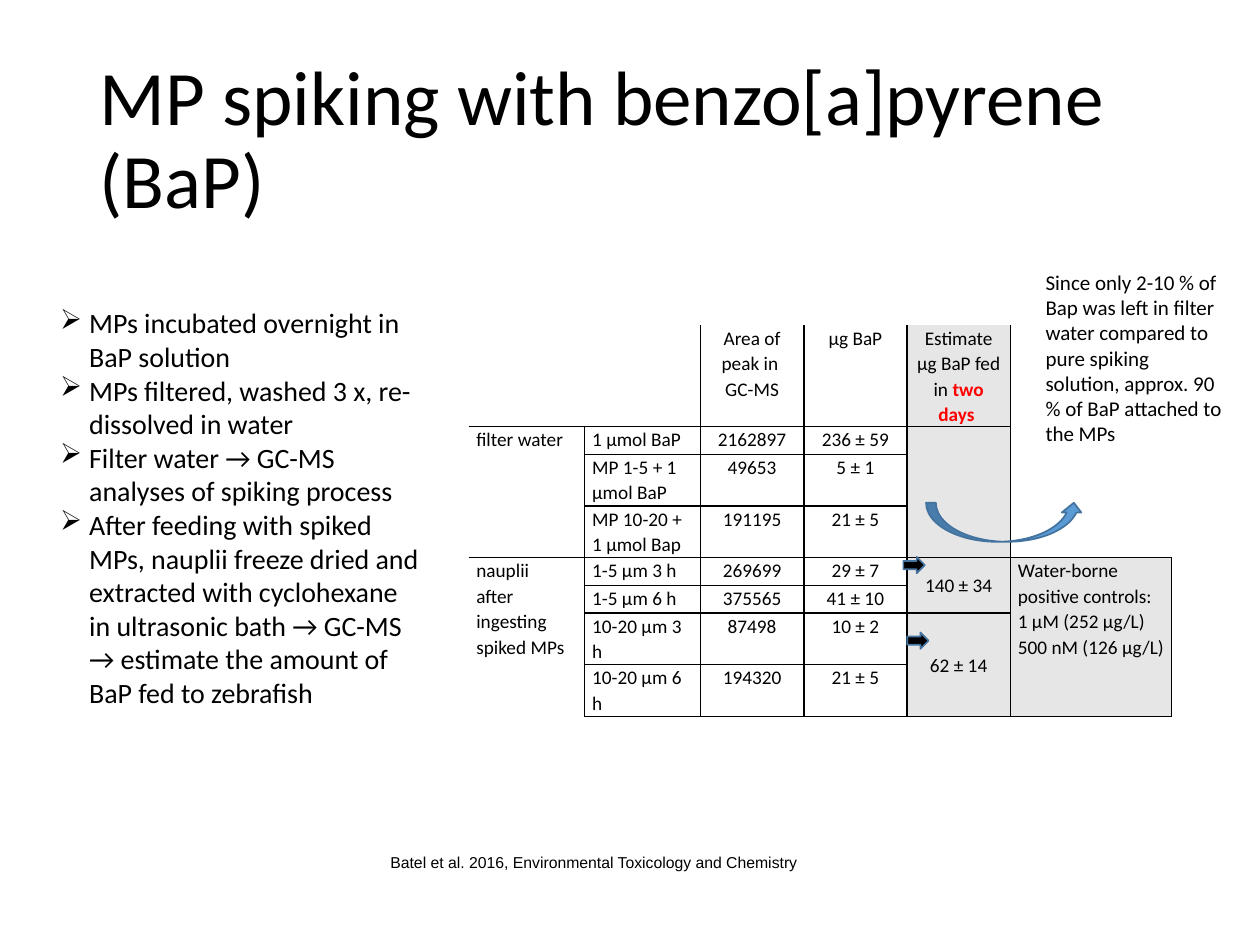
from lxml.etree import SubElement
from pptx import Presentation
from pptx.dml.color import RGBColor
from pptx.enum.shapes import MSO_SHAPE as Preset
from pptx.enum.text import MSO_ANCHOR as Anchor, MSO_AUTO_SIZE as AutoSize, PP_ALIGN as Align
from pptx.oxml.ns import qn
from pptx.util import Inches, Pt

UNIT = Inches(0.1)
COLUMNS, ROWS = 100, 75
BLACK = RGBColor(0x00, 0x00, 0x00)
RED = RGBColor(0xFF, 0x00, 0x00)
GREY = RGBColor(0xE7, 0xE6, 0xE6)
BLUE = RGBColor(0x5B, 0x9B, 0xD5)
DARK_BLUE = RGBColor(0x43, 0x73, 0x9E)

BULLETS = [
    "MPs incubated overnight in BaP solution",
    "MPs filtered, washed 3 x, re-dissolved in water",
    "Filter water → GC-MS analyses of spiking process",
    "After feeding with spiked MPs, nauplii freeze dried and extracted with cyclohexane "
    "in ultrasonic bath → GC-MS → estimate the amount of BaP fed to zebrafish",
]
NOTE = ("Since only 2-10 % of Bap was left in filter water compared to pure spiking solution, "
        "approx. 90 % of BaP attached to the MPs")
NAUPLII = ["nauplii", "after ingesting spiked MPs"]
CONTROLS = ["Water-borne positive controls:", "1 µM (252 µg/L)", "500 nM (126 µg/L)"]
ESTIMATE = [("Estimate µg BaP fed in ", "two days ")]
CELLS = [
    [[], [], ["Area of peak in ", "GC-MS"], ["µg BaP"], ESTIMATE, []],
    [["filter water"], ["1 µmol BaP"], ["2162897"], ["236 ± 59"], [], []],
    [[], ["MP 1-5 + 1 µmol BaP"], ["49653"], ["5 ± 1"], [], []],
    [[], ["MP 10-20 + 1 µmol Bap"], ["191195"], ["21 ± 5"], [], []],
    [NAUPLII, ["1-5 µm 3 h"], ["269699"], ["29 ± 7"], ["140 ± 34"], CONTROLS],
    [[], ["1-5 µm 6 h"], ["375565"], ["41 ± 10"], [], []],
    [[], ["10-20 µm 3 h"], ["87498"], ["10 ± 2"], ["62 ± 14"], []],
    [[], ["10-20 µm 6 h"], ["194320"], ["21 ± 5"], [], []],
]
SIDES = [row.split() for row in (
    "B RB LRB LRB LRB L",
    "TR LRTB LRTB LRTB LRT L",
    "R LRTB LRTB LRTB LR L",
    "RB LRTB LRTB LRTB LRB LB",
    "TR LRTB LRTB LRTB LRTB LRTB",
    "R LRTB LRTB LRTB LRB LR",
    "R LRTB LRTB LRTB LRTB LR",
    "R LRTB LRTB LRTB LRB LRB",
)]
COLUMN_WIDTHS = [9.2, 9.2, 8.2, 8.2, 8.2, 12.8]
ROW_HEIGHTS = [6.2, 2.2, 4.1, 4.1, 2.2, 2.2, 4.1, 4.1]
MERGES = [(4, 0, 7, 0), (4, 4, 5, 4), (6, 4, 7, 4), (4, 5, 7, 5)]


def grid(*lengths):
    """Turn grid units into slide lengths."""
    return [round(length * UNIT) for length in lengths]


def write_text(frame, paragraphs, size=11, font="Calibri", align=Align.LEFT, spacing=None, bullet=None):
    """Fill a text frame; the second piece of a paragraph is emphasised."""
    frame.word_wrap = True
    for index, pieces in enumerate(paragraphs):
        paragraph = frame.add_paragraph() if index else frame.paragraphs[0]
        paragraph.alignment = align
        if spacing:
            paragraph.line_spacing = spacing
        if bullet:
            properties = paragraph._p.get_or_add_pPr()
            properties.set("marL", str(Inches(0.23)))
            properties.set("indent", str(-Inches(0.23)))
            SubElement(properties, qn("a:buChar"), char=bullet)
        for position, piece in enumerate([pieces] if isinstance(pieces, str) else pieces):
            run = paragraph.add_run()
            run.text = piece
            run.font.name, run.font.size = font, Pt(size)
            run.font.bold = position > 0
            run.font.color.rgb = RED if position else BLACK


def add_text(slide, box, paragraphs, anchor=Anchor.TOP, grow=True, **text_format):
    """Place a text box on the grid."""
    frame = slide.shapes.add_textbox(*grid(*box)).text_frame
    write_text(frame, paragraphs, **text_format)
    frame.vertical_anchor = anchor
    frame.auto_size = AutoSize.SHAPE_TO_FIT_TEXT if grow else AutoSize.NONE


def set_borders(cell, sides):
    """Draw thin black lines on the named sides of a cell and clear the rest."""
    properties = cell._tc.get_or_add_tcPr()
    for position, side in enumerate("LRTB"):
        line = properties.makeelement(qn(f"a:ln{side}"), {"w": str(Pt(1))})
        properties.insert(position, line)
        if side in sides:
            fill = SubElement(line, qn("a:solidFill"))
            SubElement(fill, qn("a:srgbClr"), val=str(BLACK))
        else:
            SubElement(line, qn("a:noFill"))


def format_cell(cell, row, column):
    """Write and style one cell of the results table."""
    paragraphs = CELLS[row][column]
    cell.margin_left = cell.margin_right = Inches(0.06)
    cell.margin_top = cell.margin_bottom = 0
    cell.vertical_anchor = Anchor.MIDDLE if column == 4 and row > 3 else Anchor.TOP
    if column == 4 or (column == 5 and row > 3):
        cell.fill.solid()
        cell.fill.fore_color.rgb = GREY
    else:
        cell.fill.background()
    set_borders(cell, SIDES[row][column])
    if paragraphs:
        align = Align.CENTER if 2 <= column <= 4 else Align.LEFT
        write_text(cell.text_frame, paragraphs, align=align, spacing=1.07)
    else:
        SubElement(cell.text_frame.paragraphs[0]._p, qn("a:endParaRPr"), sz="1100")


def add_results(slide, box):
    """Place the results table in its box."""
    table = slide.shapes.add_table(len(CELLS), len(COLUMN_WIDTHS), *grid(*box)).table
    table.first_row = table.horz_banding = False
    for column, width in zip(table.columns, grid(*COLUMN_WIDTHS)):
        column.width = width
    for row, height in zip(table.rows, grid(*ROW_HEIGHTS)):
        row.height = height
    for row in range(len(CELLS)):
        for column in range(len(COLUMN_WIDTHS)):
            format_cell(table.cell(row, column), row, column)
    for top, left, bottom, right in MERGES:
        table.cell(top, left).merge(table.cell(bottom, right))


def add_arrows(slide, box):
    """Place the arrows over the table, measured from its corner."""
    left, top = box[:2]
    for preset, color, x, y, width, height in (
        (Preset.RIGHT_ARROW, BLACK, 34.5, 18.4, 1.7, 1.3),
        (Preset.RIGHT_ARROW, BLACK, 34.8, 24.4, 1.7, 1.3),
        (Preset.CURVED_UP_ARROW, BLUE, 36.3, 14.1, 12.5, 3.1),
    ):
        arrow = slide.shapes.add_shape(preset, *grid(left + x, top + y, width, height))
        arrow.shadow.inherit = False
        arrow.fill.solid()
        arrow.fill.fore_color.rgb = color
        arrow.line.color.rgb = DARK_BLUE
        arrow.line.width = Pt(1)


def main():
    """Build and save the slide."""
    presentation = Presentation()
    presentation.slide_width, presentation.slide_height = grid(COLUMNS, ROWS)
    slide = presentation.slides.add_slide(presentation.slide_layouts[6])
    table_box = (37.2, 25.8, 55.9, 29.4)
    add_text(slide, (6.9, 4, 86.2, 14.5), ["MP spiking with benzo[a]pyrene (BaP)"],
             anchor=Anchor.MIDDLE, grow=False, size=44, spacing=0.9)
    add_results(slide, table_box)
    add_arrows(slide, table_box)
    add_text(slide, (3.8, 23.8, 30.7, 33.3), BULLETS, size=16, bullet="➢")
    add_text(slide, (82, 20.9, 16.3, 15.1), [NOTE], size=12)
    add_text(slide, (29.5, 67.2, 35.6, 2.5), ["Batel et al. 2016, Environmental Toxicology and Chemistry "],
             size=9, font="Arial", align=Align.CENTER)
    presentation.save("out.pptx")


if __name__ == "__main__":
    main()
